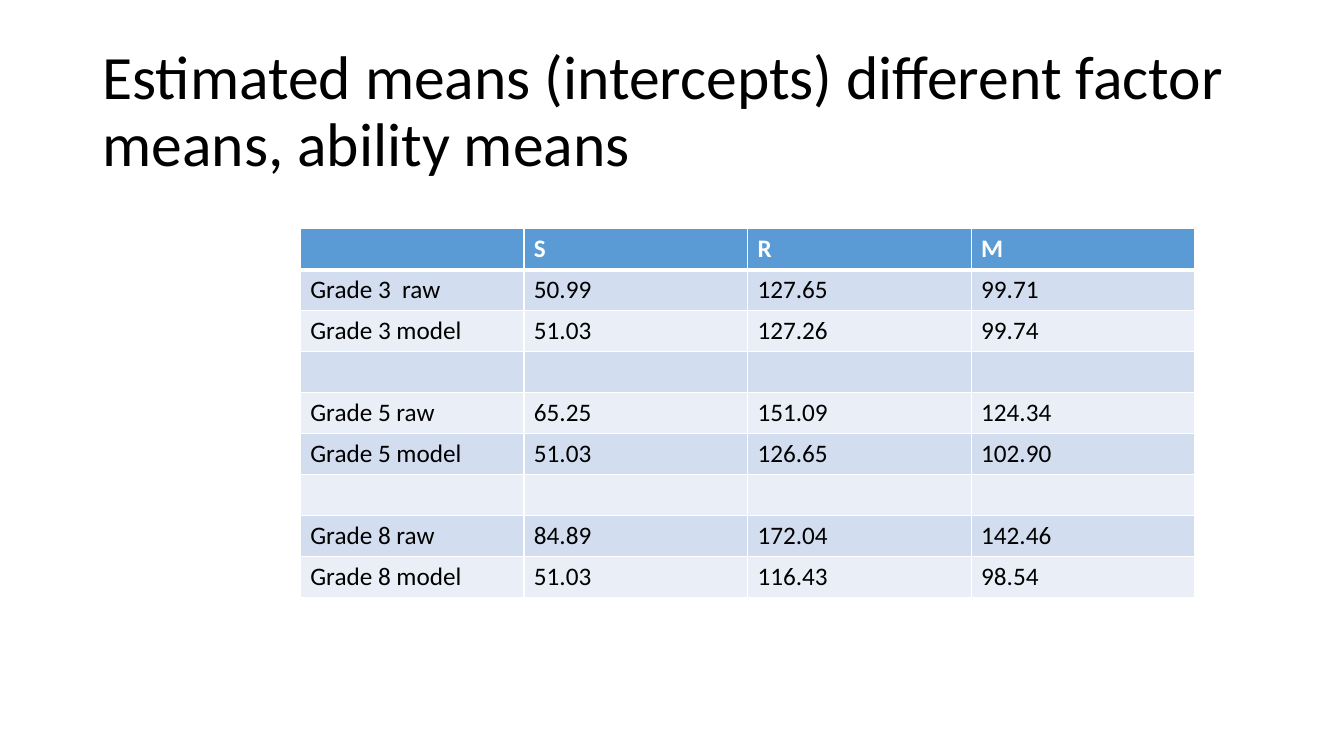
from dataclasses import dataclass

from lxml import etree
from pptx import Presentation
from pptx.dml.color import RGBColor
from pptx.enum.text import MSO_ANCHOR, MSO_AUTO_SIZE, PP_ALIGN
from pptx.oxml.ns import qn
from pptx.util import Pt

LEFT = PP_ALIGN.LEFT
MIDDLE = MSO_ANCHOR.MIDDLE
NO_AUTOFIT = MSO_AUTO_SIZE.NONE

TITLE = "Estimated means (intercepts) different factor means, ability means"
MEANS = [
    ("", "S", "R", "M"),
    ("Grade 3  raw", "50.99", "127.65", "99.71"),
    ("Grade 3 model", "51.03", "127.26", "99.74"),
    ("", "", "", ""),
    ("Grade 5 raw", "65.25", "151.09", "124.34"),
    ("Grade 5 model", "51.03", "126.65", "102.90"),
    ("", "", "", ""),
    ("Grade 8 raw", "84.89", "172.04", "142.46"),
    ("Grade 8 model", "51.03", "116.43", "98.54"),
]

PX = 9525
SLIDE_SIZE = (1280, 720)
TITLE_BOX = (88, 38, 1104, 139)
TABLE_ORIGIN = (286, 218)
COLUMN_WIDTH, ROW_HEIGHT = 213, 39


@dataclass(frozen=True)
class Theme:
    font: str = "Calibri"
    title_size: int = 44
    cell_size: int = 18
    text: str = "000000"
    header_text: str = "FFFFFF"
    header_fill: str = "5B9BD5"
    bands: tuple = ("D2DEEF", "EAEFF7")
    border: str = "FFFFFF"
    thin: int = 1
    thick: int = 3


THEME = Theme()


def px(*lengths):
    return [length * PX for length in lengths]


def style(paragraph, size, color, bold=False):
    paragraph.alignment = LEFT
    font = paragraph.font
    font.name, font.size, font.bold = THEME.font, Pt(size), bold
    font.color.rgb = RGBColor.from_string(color)


def add_border(cell, side, width):
    properties = cell._tc.get_or_add_tcPr()
    line = etree.SubElement(properties, qn(f"a:ln{side}"), w=str(Pt(width)))
    fill = etree.SubElement(line, qn("a:solidFill"))
    etree.SubElement(fill, qn("a:srgbClr"), val=THEME.border)


def add_title(slide):
    title = slide.shapes.title
    title.left, title.top, title.width, title.height = px(*TITLE_BOX)
    frame = title.text_frame
    frame.text = TITLE
    frame.word_wrap = True
    frame.auto_size = NO_AUTOFIT
    frame.vertical_anchor = MIDDLE
    heading = frame.paragraphs[0]
    heading.line_spacing = 0.9
    style(heading, THEME.title_size, THEME.text)


def fill_cell(cell, value, row):
    header = row == 0
    widths = {
        "L": THEME.thin,
        "R": THEME.thin,
        "T": THEME.thick if row == 1 else THEME.thin,
        "B": THEME.thick if header else THEME.thin,
    }
    for side, width in widths.items():
        add_border(cell, side, width)
    color = THEME.header_fill if header else THEME.bands[(row - 1) % 2]
    cell.fill.solid()
    cell.fill.fore_color.rgb = RGBColor.from_string(color)
    cell.text = value
    text_color = THEME.header_text if header else THEME.text
    style(cell.text_frame.paragraphs[0], THEME.cell_size, text_color, header)


def add_means(slide):
    rows, columns = len(MEANS), len(MEANS[0])
    size = (columns * COLUMN_WIDTH, rows * ROW_HEIGHT)
    table = slide.shapes.add_table(rows, columns, *px(*TABLE_ORIGIN, *size)).table
    for row, values in enumerate(MEANS):
        for column, value in enumerate(values):
            fill_cell(table.cell(row, column), value, row)


def main():
    deck = Presentation()
    deck.slide_width, deck.slide_height = px(*SLIDE_SIZE)
    slide = deck.slides.add_slide(deck.slide_layouts[5])
    add_title(slide)
    add_means(slide)
    deck.save("out.pptx")


if __name__ == "__main__":
    main()
